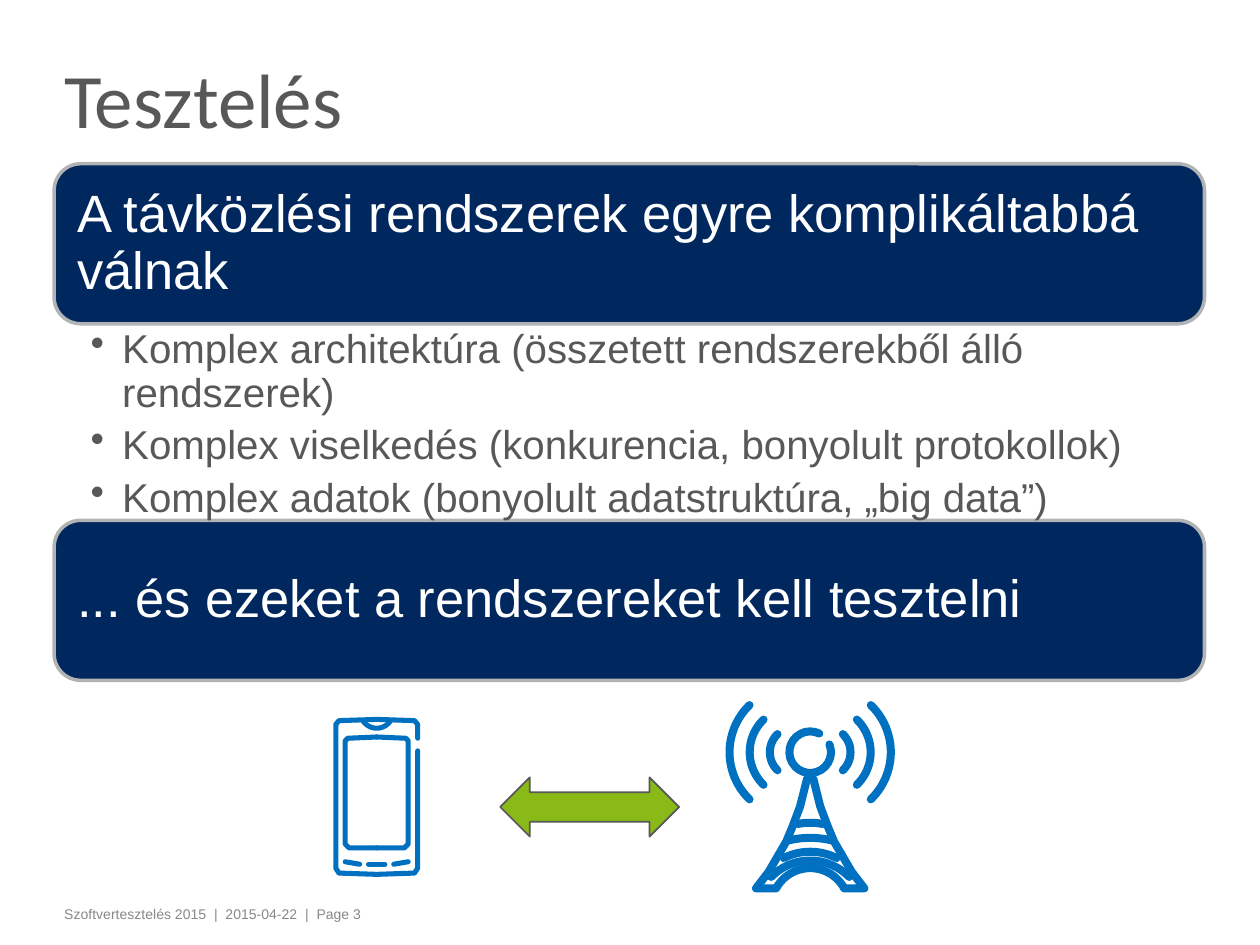
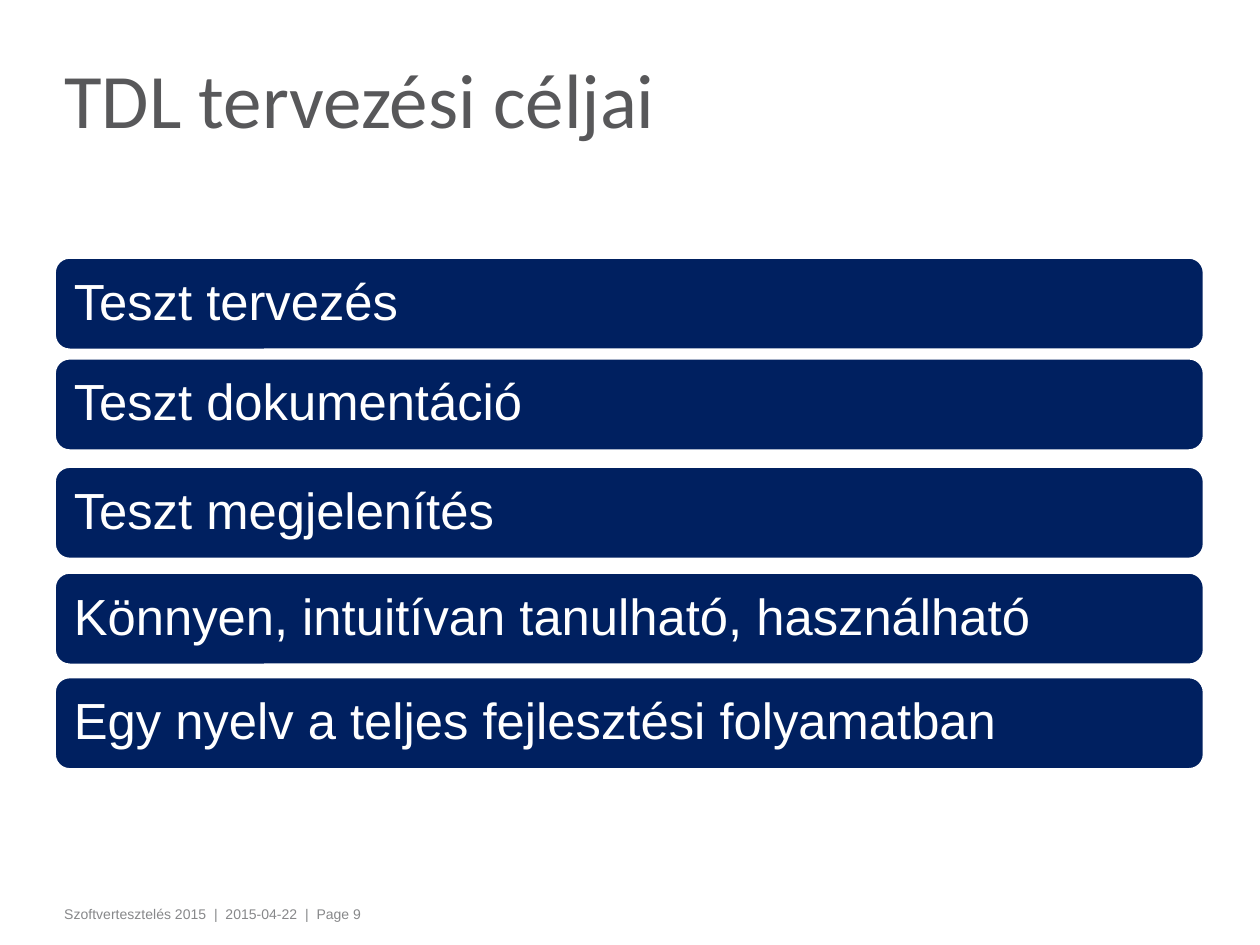
from math import asin, cos, pi, radians, sin

from lxml import etree
from pptx import Presentation
from pptx.dml.color import RGBColor
from pptx.enum.shapes import MSO_SHAPE
from pptx.enum.text import MSO_ANCHOR, PP_ALIGN
from pptx.oxml.ns import qn
from pptx.util import Emu, Inches, Pt

ROUND_RECT = MSO_SHAPE.ROUNDED_RECTANGLE
DOUBLE_ARROW = MSO_SHAPE.LEFT_RIGHT_ARROW
TOP, MIDDLE = MSO_ANCHOR.TOP, MSO_ANCHOR.MIDDLE
LEFT = PP_ALIGN.LEFT

COLS, ROWS = 100, 75
MARGIN, BODY_W = 4.3, 91.3


def rgb(value):
    return RGBColor.from_string(value)


def write(tf, lines, size, color, font="Arial", anchor=TOP, inset=(0, 0, 0, 0),
          spacing=1.0, after=0, bullet=None):
    tf.word_wrap = True
    tf.vertical_anchor = anchor
    tf.margin_left, tf.margin_top, tf.margin_right, tf.margin_bottom = map(Inches, inset)
    for i, line in enumerate(lines):
        p = tf.add_paragraph() if i else tf.paragraphs[0]
        if bullet:
            pPr = p._p.get_or_add_pPr()
            pPr.set("marL", str(Inches(0.25)))
            pPr.set("indent", str(-Inches(0.25)))
            etree.SubElement(pPr, qn("a:buChar")).set("char", bullet)
        p.alignment = LEFT
        p.line_spacing = spacing
        p.space_after = Pt(after)
        r = p.add_run()
        r.text = line
        r.font.name = font
        r.font.size = Pt(size)
        r.font.color.rgb = rgb(color)


def arc(cx, cy, radius, start, end, steps=24):
    angles = [radians(start + (end - start) * i / steps) for i in range(steps + 1)]
    return [(cx + radius * cos(a), cy + radius * sin(a)) for a in angles]


def bow(cx, apex, half, sag):
    radius = (half ** 2 + sag ** 2) / (2 * abs(sag))
    sweep = asin(half / radius) * 180 / pi
    side = 1 if sag > 0 else -1
    return arc(cx, apex + side * radius, radius, -side * 90 - sweep, -side * 90 + sweep)


def mirror(points, cx):
    return [(2 * cx - x, y) for x, y in points]


class Deck:
    GREY = "58585A"
    FOOTER = "87888A"
    WHITE = "FFFFFF"
    ICON = "0070C0"

    def __init__(self):
        self.prs = Presentation()
        self.prs.slide_width, self.prs.slide_height = Inches(10), Inches(7.5)
        self.s = None

    def x(self, cols):
        return Emu(round(self.prs.slide_width * cols / COLS))

    def y(self, rows):
        return Emu(round(self.prs.slide_height * rows / ROWS))

    def box(self, left, top, width, height):
        return self.x(left), self.y(top), self.x(width), self.y(height)

    def slide(self, title, page):
        self.s = self.prs.slides.add_slide(self.prs.slide_layouts[6])
        self.text([f"Szoftvertesztelés 2015\u00a0 |\u00a0 2015-04-22\u00a0 |\u00a0 Page {page}"],
                  (MARGIN, 71.4, 80.9, 2.4), size=8, color=self.FOOTER,
                  inset=(0.08, 0.05, 0.08, 0.05))
        self.text([title], (MARGIN, 2.6, 82, 11.9), size=44, color=self.GREY,
                  font="Calibri", anchor=MIDDLE, inset=(0.08, 0, 0.08, 0), spacing=0.75)

    def text(self, lines, at, **fmt):
        write(self.s.shapes.add_textbox(*self.box(*at)).text_frame, lines, **fmt)

    def shape(self, kind, at, fill, line, weight):
        sp = self.s.shapes.add_shape(kind, *self.box(*at))
        sp.shadow.inherit = False
        sp.fill.solid()
        sp.fill.fore_color.rgb = rgb(fill)
        sp.line.color.rgb = rgb(line)
        sp.line.width = Pt(weight)
        return sp

    def bar(self, line, top, height, fill, border, size):
        sp = self.shape(ROUND_RECT, (MARGIN, top, BODY_W, height), fill, border, 2)
        write(sp.text_frame, [line], size, self.WHITE, anchor=MIDDLE,
              inset=(0.12,) * 4, spacing=0.9)

    def icon(self, strokes, weight):
        paths = [[(self.x(x), self.y(y)) for x, y in stroke] for stroke in strokes]
        builder = self.s.shapes.build_freeform(*paths[0][0])
        for i, path in enumerate(paths):
            if i:
                builder.move_to(*path[0])
            builder.add_line_segments(path[1:], close=False)
        sp = builder.convert_to_shape()
        sp.shadow.inherit = False
        sp.fill.background()
        sp.line.color.rgb = rgb(self.ICON)
        sp.line.width = Pt(weight)
        ln = sp._element.spPr.find(qn("a:ln"))
        ln.set("cap", "rnd")
        etree.SubElement(ln, qn("a:round"))

    def tower(self, cx, cy):
        waves = [arc(cx + 1.2, cy, radius, -46, 46) for radius in (2, 3.6, 5.2)]
        leg = [(cx - 0.25, 61.8), (cx - 0.8, 64), (cx - 1.4, 65.6),
               (cx - 1.9, 66.8), (cx - 3.3, 69.2), (cx - 4.3, 70.5), (cx - 2.7, 70.5)]
        bars = [(65.3, 1, 0.1), (66.5, 1.7, 0.2), (67.6, 2.1, 0.5),
                (68.3, 3.1, 1.3), (68.9, 2.7, 1.6)]
        strokes = [arc(cx, cy, 1.65, -22, 296), leg, *waves]
        strokes += [mirror(stroke, cx) for stroke in strokes[1:]]
        self.icon(strokes + [bow(cx, *bar) for bar in bars], 4.6)

    def phone(self, cx):
        case = [(cx + 3.25, 58.6), (cx + 3.25, 57.5), (cx + 3, 57.2), (cx, 57.1),
                (cx - 3, 57.2), (cx - 3.25, 57.5), (cx - 3.25, 68.9), (cx - 3, 69.3),
                (cx, 69.4), (cx + 3, 69.3), (cx + 3.25, 68.9), (cx + 3.25, 59.6)]
        half = [(cx, 58.5), (cx - 2.3, 58.6), (cx - 2.5, 58.8),
                (cx - 2.5, 67), (cx - 2.2, 67.3), (cx, 67.3)]
        key = [(cx + 1.35, 68.6), (cx + 2.5, 68.4)]
        home = [(cx - 0.65, 68.6), (cx + 0.65, 68.6)]
        self.icon([case, half, mirror(half, cx), key, mirror(key, cx), home,
                   bow(cx, 57.8, 1.1, -0.6)], 2.9)


def main():
    deck = Deck()

    deck.slide("Tesztelés", 3)
    for line, top in (("A távközlési rendszerek egyre komplikáltabbá válnak", 13),
                      ("... és ezeket a rendszereket kell tesztelni", 41.3)):
        deck.bar(line, top, 12.7, "00285E", "B1B3B4", 30)
    deck.text(["Komplex architektúra (összetett rendszerekből álló rendszerek)",
               "Komplex viselkedés (konkurencia, bonyolult protokollok)",
               "Komplex adatok (bonyolult adatstruktúra, „big data”)"],
              (MARGIN, 25.7, BODY_W, 15.6), size=23, color=deck.GREY,
              inset=(0.29, 0.04, 0.23, 0.04), spacing=0.9, after=5.3, bullet="•")
    deck.tower(64.3, 59.7)
    deck.phone(29.9)
    deck.shape(DOUBLE_ARROW, (39.7, 61.7, 14.2, 4.7), "89BA17", deck.GREY, 1)

    deck.slide("TDL tervezési céljai", 9)
    goals = {"Teszt tervezés": 20.4,
             "Teszt dokumentáció": 28.4,
             "Teszt megjelenítés": 37,
             "Könnyen, intuitívan tanulható, használható": 45.4,
             "Egy nyelv a teljes fejlesztési folyamatban": 53.7}
    for goal, top in goals.items():
        deck.bar(goal, top, 7.4, "002060", deck.WHITE, 29)

    deck.prs.save("out.pptx")


if __name__ == "__main__":
    main()
